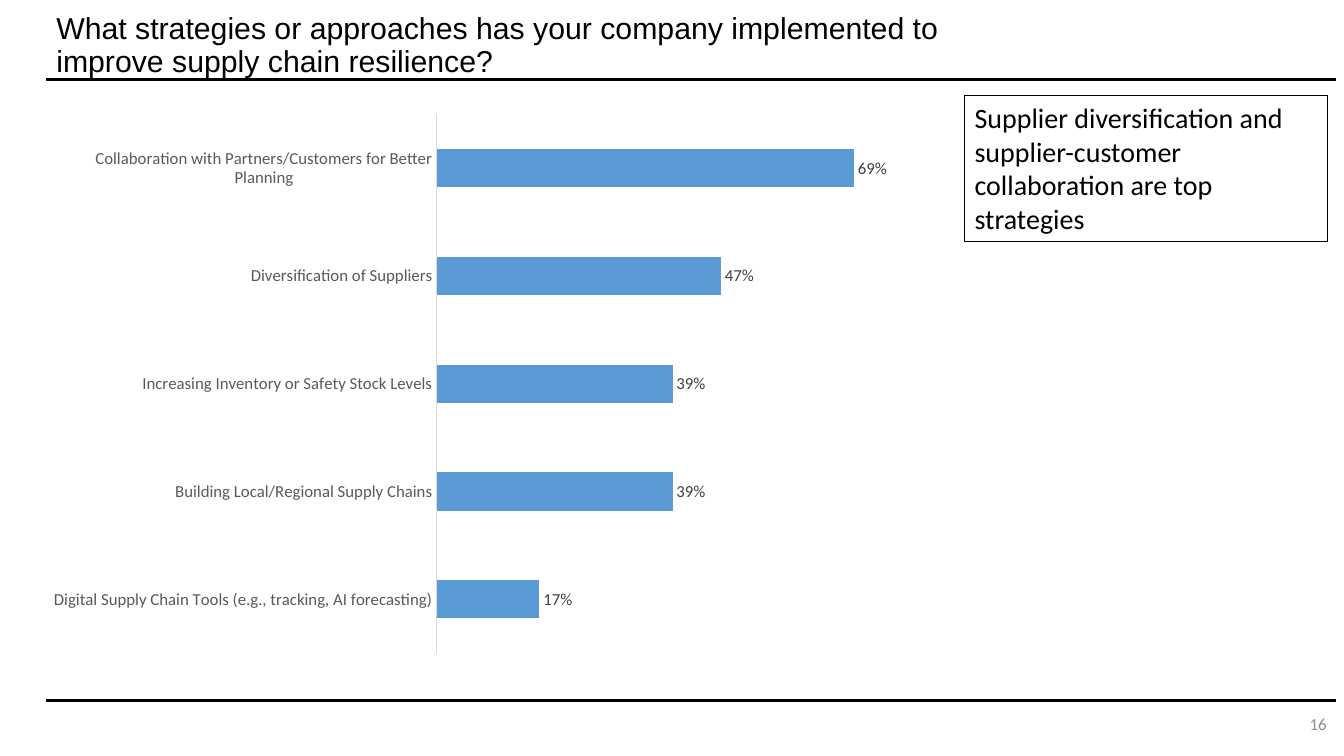
from lxml import etree
from pptx import Presentation
from pptx.chart.data import CategoryChartData
from pptx.dml.color import RGBColor
from pptx.enum.chart import XL_CHART_TYPE, XL_LABEL_POSITION, XL_TICK_MARK
from pptx.enum.shapes import MSO_CONNECTOR, MSO_SHAPE
from pptx.enum.text import MSO_ANCHOR, PP_ALIGN
from pptx.oxml.ns import qn
from pptx.util import Cm, Pt

LEFT, RIGHT = 1.17, 33.68
STRATEGIES = [
    ("Digital Supply Chain Tools (e.g., tracking, AI forecasting)", 0.17),
    ("Building Local/Regional Supply Chains", 0.39),
    ("Increasing Inventory or Safety Stock Levels", 0.39),
    ("Diversification of Suppliers", 0.47),
    ("Collaboration with Partners/Customers for Better Planning", 0.69),
]


def color(value):
    """Turn a hex string into a colour."""
    return RGBColor.from_string(value)


def set_font(font, size, fill, name="Calibri"):
    """Set the size, colour and typeface of a font."""
    font.size = Pt(size)
    font.name = name
    font.color.rgb = color(fill)


def write(sp, text, size, fill, name="Calibri", anchor=MSO_ANCHOR.MIDDLE, align=PP_ALIGN.LEFT):
    """Write one wrapped paragraph into a shape and return it."""
    tf = sp.text_frame
    tf.word_wrap = True
    tf.vertical_anchor = anchor
    p = tf.paragraphs[0]
    p.text = text
    p.alignment = align
    set_font(p.runs[0].font, size, fill, name)
    return p


def add_rule(slide, y):
    """Draw a thin line across the slide at a given height."""
    line = slide.shapes.add_connector(MSO_CONNECTOR.STRAIGHT, Cm(LEFT), Cm(y), Cm(RIGHT), Cm(y))
    line.line.color.rgb = color("000000")
    line.line.width = Pt(0)
    etree.SubElement(line._element.spPr, qn("a:effectLst"))


def add_title(slide, x, y, w, h):
    """Place the question heading."""
    sp = slide.shapes.add_textbox(Cm(x), Cm(y), Cm(w), Cm(h))
    p = write(sp, "What strategies or approaches has your company implemented to "
              "improve supply chain resilience?", 21.6, "000000", "Arial")
    p.line_spacing = 0.9


def add_page_number(slide, x, y, w, h):
    """Place the page number at the right of its box."""
    sp = slide.shapes.add_textbox(Cm(x), Cm(y), Cm(w), Cm(h))
    write(sp, "16", 12, "8C8C8C", align=PP_ALIGN.RIGHT)


def set_plot_layout(chart, **box):
    """Fix the inner plot area as fractions of the chart."""
    plot_area = chart._chartSpace.chart.plotArea
    layout = plot_area.find(qn("c:layout"))
    if layout is None:
        layout = etree.Element(qn("c:layout"))
        plot_area.insert(0, layout)
    manual = etree.SubElement(layout, qn("c:manualLayout"))
    settings = {"layoutTarget": "inner", "xMode": "edge", "yMode": "edge", **box}
    for tag, value in settings.items():
        etree.SubElement(manual, qn(f"c:{tag}")).set("val", str(value))


def add_strategy_chart(slide, x, y, w, h):
    """Place the bar chart of strategies."""
    data = CategoryChartData(number_format="0%")
    data.categories = [name for name, share in STRATEGIES]
    data.add_series("Series 1", [share for name, share in STRATEGIES])
    chart = slide.shapes.add_chart(
        XL_CHART_TYPE.BAR_CLUSTERED, Cm(x), Cm(y), Cm(w), Cm(h), data).chart
    chart.has_legend = False
    chart.has_title = False
    set_font(chart.font, 12, "000000")
    set_plot_layout(chart, x=0.432, y=0.04, w=0.536, h=0.872)

    axis = chart.category_axis
    axis.major_tick_mark = XL_TICK_MARK.NONE
    axis.format.line.color.rgb = color("D9D9D9")
    axis.format.line.width = Pt(0.75)
    set_font(axis.tick_labels.font, 12, "595959")
    values = chart.value_axis
    values.visible = False
    values.has_major_gridlines = False
    values.minimum_scale, values.maximum_scale = 0, 0.8

    plot = chart.plots[0]
    plot.gap_width = 182
    plot.vary_by_categories = False
    series = plot.series[0]
    series.format.fill.solid()
    series.format.fill.fore_color.rgb = color("5B9BD5")
    labels = series.data_labels
    labels.show_value = True
    labels.position = XL_LABEL_POSITION.OUTSIDE_END
    labels.number_format = "0%"
    labels.number_format_is_linked = False
    set_font(labels.font, 12, "404040")


def add_takeaway(slide, x, y, w, h):
    """Place the framed key message."""
    sp = slide.shapes.add_shape(MSO_SHAPE.RECTANGLE, Cm(x), Cm(y), Cm(w), Cm(h))
    sp.shadow.inherit = False
    sp.fill.solid()
    sp.fill.fore_color.rgb = color("FFFFFF")
    sp.line.color.rgb = color("000000")
    sp.line.width = Pt(1)
    write(sp, "Supplier diversification and supplier-customer collaboration are top strategies",
          20, "000000", anchor=MSO_ANCHOR.TOP)


def main():
    """Build the slide and save it."""
    prs = Presentation()
    prs.slide_width, prs.slide_height = Cm(33.87), Cm(19.05)
    slide = prs.slides.add_slide(prs.slide_layouts[6])
    for y in (2.01, 17.65):
        add_rule(slide, y)
    add_page_number(slide, 23.93, 17.83, 9.75, 0.84)
    add_title(slide, LEFT, 0.48, 25.48, 1.37)
    add_strategy_chart(slide, LEFT, 2.26, 22.76, 15.57)
    add_takeaway(slide, 24.31, 2.41, 9.14, 3.68)
    prs.save("out.pptx")


if __name__ == "__main__":
    main()
